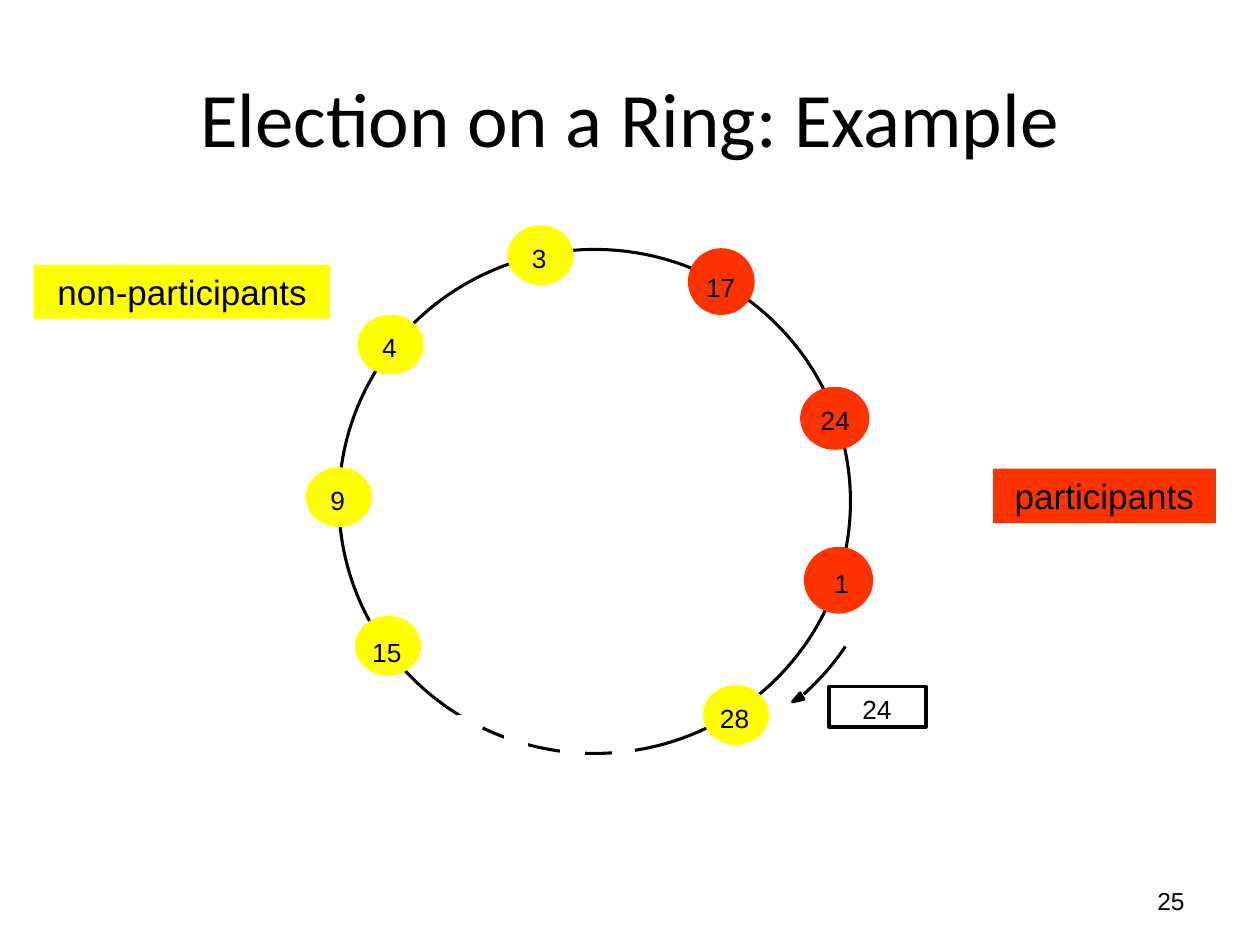
from dataclasses import dataclass
from pptx import Presentation
from pptx.dml.color import RGBColor as RGB
from pptx.enum.shapes import MSO_SHAPE as Shape
from pptx.enum.text import MSO_ANCHOR as Anchor, PP_ALIGN as Align
from pptx.util import Inches, Pt

COLORS = {"black": "000000", "white": "FFFFFF", "yellow": "FFFF00", "red": "FF3300"}
LINE = 1.75


@dataclass
class Box:
    x: float
    y: float
    w: float
    h: float

    def lengths(self) -> list:
        return [Inches(v) for v in (self.x, self.y, self.w, self.h)]


@dataclass
class Node:
    name: str
    box: Box
    color: str
    edge: str
    mid: float  # centre of the number
    top: float  # top of the number


def color(name: str) -> RGB:
    return RGB.from_string(COLORS[name])


def paint(shape, fill: str = "", edge: str = "") -> None:
    shape.shadow.inherit = False
    if fill:
        shape.fill.solid()
        shape.fill.fore_color.rgb = color(fill)
    else:
        shape.fill.background()
    if edge:
        shape.line.color.rgb = color(edge)
        shape.line.width = Pt(LINE)
    else:
        shape.line.fill.background()


def draw(slide, kind, box: Box, fill: str = "", edge: str = ""):
    shape = slide.shapes.add_shape(kind, *box.lengths())
    paint(shape, fill, edge)
    return shape


def write(shape, text: str, size: int, font: str = "Arial", align=Align.CENTER) -> None:
    frame = shape.text_frame
    frame.text = text
    frame.vertical_anchor = Anchor.MIDDLE
    par = frame.paragraphs[0]
    par.alignment = align
    run = par.runs[0].font
    run.size, run.name, run.color.rgb = Pt(size), font, color("black")


def put(slide, box: Box, text: str, size: int, font: str = "Arial", align=Align.CENTER):
    area = slide.shapes.add_textbox(*box.lengths())
    area.text_frame.word_wrap = True
    write(area, text, size, font, align)
    return area


def number(slide, text: str, mid: float, top: float) -> None:
    area = put(slide, Box(mid - 0.2, top, 0.4, 0.25), text, 15)
    frame = area.text_frame
    frame.word_wrap = False
    frame.margin_left = frame.margin_right = frame.margin_top = frame.margin_bottom = 0


def trace(slide, points: list, close: bool, fill: str = "") -> None:
    spots = [(Inches(x), Inches(y)) for x, y in points]
    path = slide.shapes.build_freeform(*spots[0])
    path.add_line_segments(spots[1:], close=close)
    paint(path.convert_to_shape(), fill, "black")


def curve(ends: list, steps: int = 12) -> list:
    """Points along a cubic curve through its four control points."""
    def at(t: float) -> tuple:
        parts = ((1 - t) ** 3, 3 * t * (1 - t) ** 2, 3 * t * t * (1 - t), t ** 3)
        return tuple(sum(p * e[i] for p, e in zip(parts, ends)) for i in (0, 1))
    return [at(k / steps) for k in range(steps + 1)]


def yellow(name: str, x: float, y: float, mid: float, top: float) -> Node:
    return Node(name, Box(x, y, 0.5, 0.45), "yellow", "yellow", mid, top)


def red(name: str, box: Box, mid: float, top: float) -> Node:
    return Node(name, box, "red", "", mid, top)


NODES = [
    yellow("3", 4.04, 1.8, 4.28, 1.92),
    red("17", Box(5.46, 1.97, 0.53, 0.53), 5.72, 2.15),
    red("24", Box(6.35, 3.07, 0.55, 0.5), 6.63, 3.21),
    red("1", Box(6.38, 4.34, 0.55, 0.53), 6.68, 4.5),
    yellow("28", 5.59, 5.45, 5.83, 5.57),
    yellow("15", 2.83, 4.9, 3.07, 5.05),
    yellow("9", 2.44, 3.72, 2.68, 3.84),
    yellow("4", 2.85, 2.51, 3.09, 2.63),
]
GAPS = [
    Box(3.63, 5.69, 0.19, 0.08), Box(4.01, 5.82, 0.17, 0.11),
    Box(4.46, 5.95, 0.17, 0.06), Box(4.87, 5.95, 0.16, 0.08),
]
LEGEND = [
    ("participants", Box(7.88, 3.72, 1.77, 0.43), "red"),
    ("non-participants", Box(0.27, 2.1, 2.35, 0.43), "yellow"),
]


def main() -> None:
    deck = Presentation()
    deck.slide_width, deck.slide_height = Inches(10), Inches(7.5)
    slide = deck.slides.add_slide(deck.slide_layouts[6])

    # Title and page number
    put(slide, Box(0.5, 0.3, 9, 1.25), "Election on a Ring: Example", 44, "Calibri")
    put(slide, Box(7.17, 6.95, 2.33, 0.4), "25", 14, align=Align.RIGHT)

    # Ring, with gaps for the nodes left out
    draw(slide, Shape.OVAL, Box(2.69, 1.98, 4.06, 4), edge="black")
    for gap in GAPS:
        draw(slide, Shape.RECTANGLE, gap, "white", "white")

    # Message and its direction
    trace(slide, curve([(6.71, 5.13), (6.62, 5.27), (6.5, 5.4), (6.38, 5.51)]), False)
    trace(slide, [(6.35, 5.5), (6.38, 5.55), (6.29, 5.57)], True, "black")
    draw(slide, Shape.RECTANGLE, Box(6.58, 5.45, 0.77, 0.32), "white", "black")
    number(slide, "24", 6.96, 5.5)

    # Nodes
    for node in NODES:
        draw(slide, Shape.OVAL, node.box, node.color, node.edge)
        number(slide, node.name, node.mid, node.top)

    # Legend
    for text, box, fill in LEGEND:
        write(draw(slide, Shape.RECTANGLE, box, fill), text, 20)

    deck.save("out.pptx")


if __name__ == "__main__":
    main()
